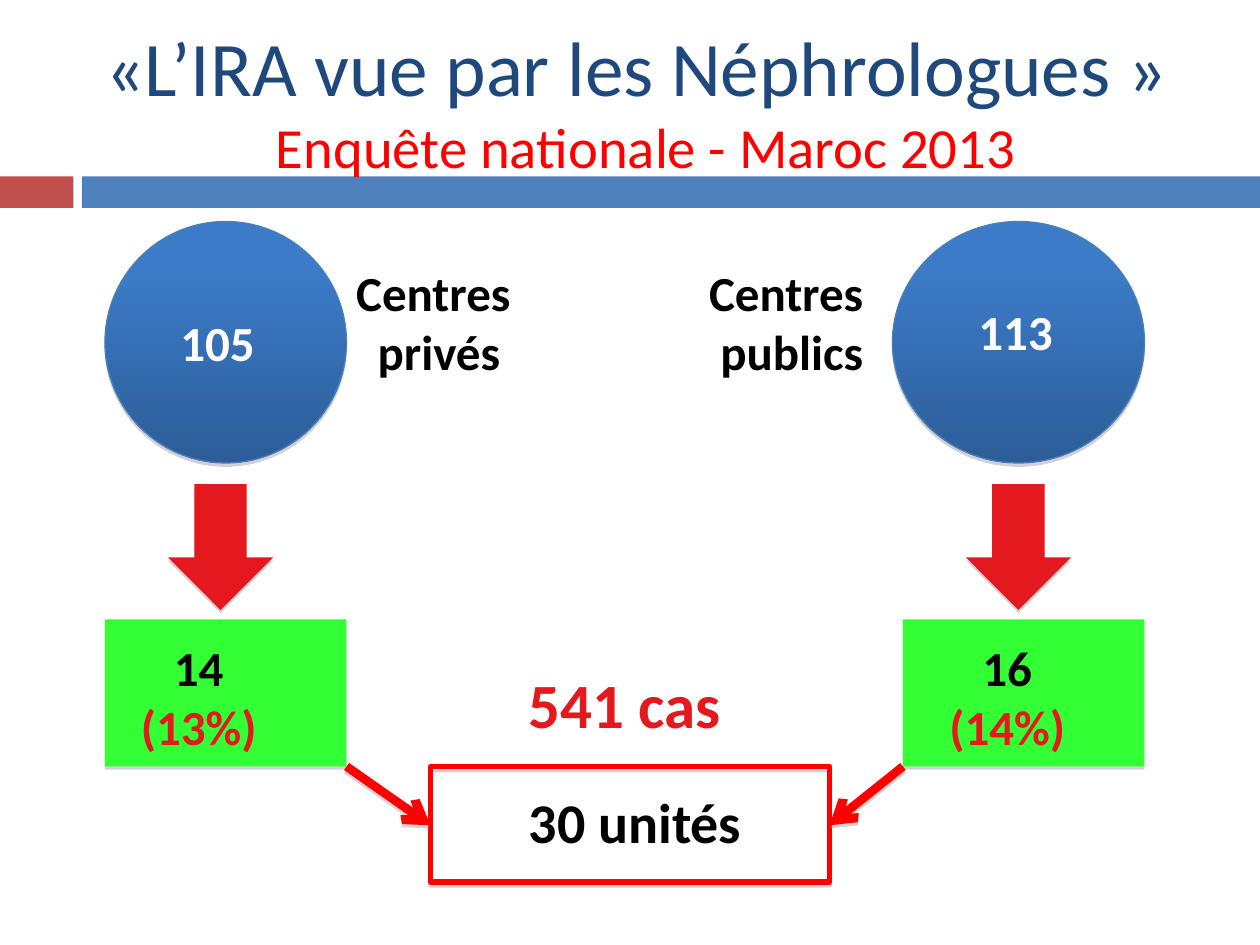
import pptx
import pptx.util
import pptx.dml.color
import pptx.enum.shapes
import pptx.enum.text
import pptx.oxml
import pptx.oxml.ns

COLORS = {
    "navy": "1F497D", "red": "FF0000", "crimson": "E3191E", "green": "32FF34",
    "brick": "C0504D", "blue": "4F81BD", "outline": "4A7EBB", "sky": "3C7BC7",
    "deep": "2C5D98", "black": "000000", "white": "FFFFFF", "shadow": "808080",
}
COLUMNS, ROWS = 120, 90
SHAPES = pptx.enum.shapes.MSO_SHAPE
ALIGN = pptx.enum.text.PP_ALIGN
ANCHOR = pptx.enum.text.MSO_ANCHOR


def rgb(name):
    return pptx.dml.color.RGBColor.from_string(COLORS[name])


class SurveySlide:
    font = "Calibri"

    def __init__(self, deck):
        self.cell_width = deck.slide_width / COLUMNS
        self.cell_height = deck.slide_height / ROWS
        self.page = deck.slides.add_slide(deck.slide_layouts[5])

    def place(self, column, row, width, height):
        return (round(column * self.cell_width), round(row * self.cell_height),
                round(width * self.cell_width), round(height * self.cell_height))

    def style(self, item, size, color, bold=None):
        item.font.name = self.font
        item.font.size = pptx.util.Pt(size)
        item.font.bold = bold
        item.font.color.rgb = rgb(color)

    def effects(self, item, shadow=True):
        namespace = pptx.oxml.ns.nsdecls("a")
        inner = (f'<a:outerShdw blurRad="0" dist="22860" dir="5400000" rotWithShape="0">'
                 f'<a:srgbClr val="{COLORS["shadow"]}"><a:alpha val="35000"/></a:srgbClr>'
                 f'</a:outerShdw>') if shadow else ""
        item.element.spPr.append(
            pptx.oxml.parse_xml(f"<a:effectLst {namespace}>{inner}</a:effectLst>"))

    def shape(self, kind, area, fill=None, line=None, weight=0.75, shadow=True):
        shape = self.page.shapes.add_shape(kind, *self.place(*area))
        if fill:
            shape.fill.solid()
            shape.fill.fore_color.rgb = rgb(fill)
        else:
            shape.fill.background()
        if line:
            shape.line.color.rgb = rgb(line)
            shape.line.width = pptx.util.Pt(weight)
        else:
            shape.line.fill.background()
        self.effects(shape, shadow)
        return shape

    def circle(self, area):
        circle = self.shape(SHAPES.OVAL, area, "sky", "outline")
        circle.fill.gradient()
        circle.fill.gradient_angle = 270
        for stop, color, position in zip(circle.fill.gradient_stops, ("sky", "deep"), (0.2, 1)):
            stop.color.rgb = rgb(color)
            stop.position = position

    def text(self, area, lines, size=28, align=ALIGN.CENTER):
        frame = self.page.shapes.add_textbox(*self.place(*area)).text_frame
        frame.word_wrap = True
        for number, (words, color, right_indent) in enumerate(lines):
            para = frame.add_paragraph() if number else frame.paragraphs[0]
            para.text = words
            para.alignment = align
            self.style(para, size, color, True)
            if right_indent:
                para._p.get_or_add_pPr().set("marR", str(pptx.util.Pt(right_indent)))

    def arrow(self, start, end):
        begin_x, begin_y, end_x, end_y = self.place(*start, *end)
        arrow = self.page.shapes.add_connector(
            pptx.enum.shapes.MSO_CONNECTOR.STRAIGHT, begin_x, begin_y, end_x, end_y)
        arrow.line.color.rgb = rgb("red")
        arrow.line.width = pptx.util.Pt(5)
        arrow.line._get_or_add_ln().append(pptx.oxml.parse_xml(
            f'<a:tailEnd {pptx.oxml.ns.nsdecls("a")} type="arrow"/>'))
        self.effects(arrow)

    def title(self, area, lines):
        title = self.page.shapes.title
        title.left, title.top, title.width, title.height = self.place(*area)
        frame = title.text_frame
        frame.word_wrap = True
        frame.auto_size = pptx.enum.text.MSO_AUTO_SIZE.NONE
        frame.vertical_anchor = ANCHOR.MIDDLE
        para = frame.paragraphs[0]
        para.alignment = ALIGN.CENTER
        for number, (words, size, color) in enumerate(lines):
            if number:
                para.add_line_break()
            span = para.add_run()
            span.text = words
            self.style(span, size, color)
        title.element.getparent().append(title.element)


def main():
    deck = pptx.Presentation()
    deck.slide_width = pptx.util.Inches(10)
    deck.slide_height = pptx.util.Inches(7.5)
    slide = SurveySlide(deck)

    slide.shape(SHAPES.RECTANGLE, (0, 16.8, 7, 3), "brick", shadow=False)
    slide.shape(SHAPES.RECTANGLE, (7.8, 16.8, 112.2, 3), "blue", shadow=False)

    centres = [
        ((10, 21.1, 23, 23), (21.8, 24.4, 40, 12.5), "privés",
         "105", (16, 29.2), 16, 10, 10, "14", "(13%)"),
        ((85, 21.1, 24, 23), (53.4, 24.4, 44, 12.5), "publics",
         "113", (92, 28.1), 92, 86, 87, "16", "(14%)"),
    ]
    for (circle, label, sector, total, total_at, arrow_left, box_left,
         count_left, count, share) in centres:
        slide.circle(circle)
        slide.text(label, [("Centres ", "black", 0), (sector, "black", 0)])
        slide.text((*total_at, 12, 6.8), [(total, "white", 0)], align=ALIGN.LEFT)
        slide.shape(SHAPES.DOWN_ARROW, (arrow_left, 46.1, 10, 12), "crimson")
        slide.shape(SHAPES.RECTANGLE, (box_left, 59, 23, 14), "green")
        slide.text((count_left, 60.1, 21, 12.5),
                   [(count, "black", 19), (share, "crimson", 0)])

    slide.shape(SHAPES.RECTANGLE, (41, 73, 38, 11), line="red", weight=3)
    slide.arrow((86, 73), (79, 78.6))
    slide.arrow((33, 73), (41, 78.6))
    slide.text((46, 74.4, 29, 7.7), [("30 unités", "black", 0)], 32)
    slide.text((45, 62.8, 29, 8.5), [("541 cas", "crimson", 0)], 36)
    slide.title((8, 3, 107, 13), [
        ("«L’IRA vue par les Néphrologues » ", 44.1, "navy"),
        ("Enquête nationale - Maroc 2013", 32.4, "red"),
    ])
    deck.save("out.pptx")


if __name__ == "__main__":
    main()
